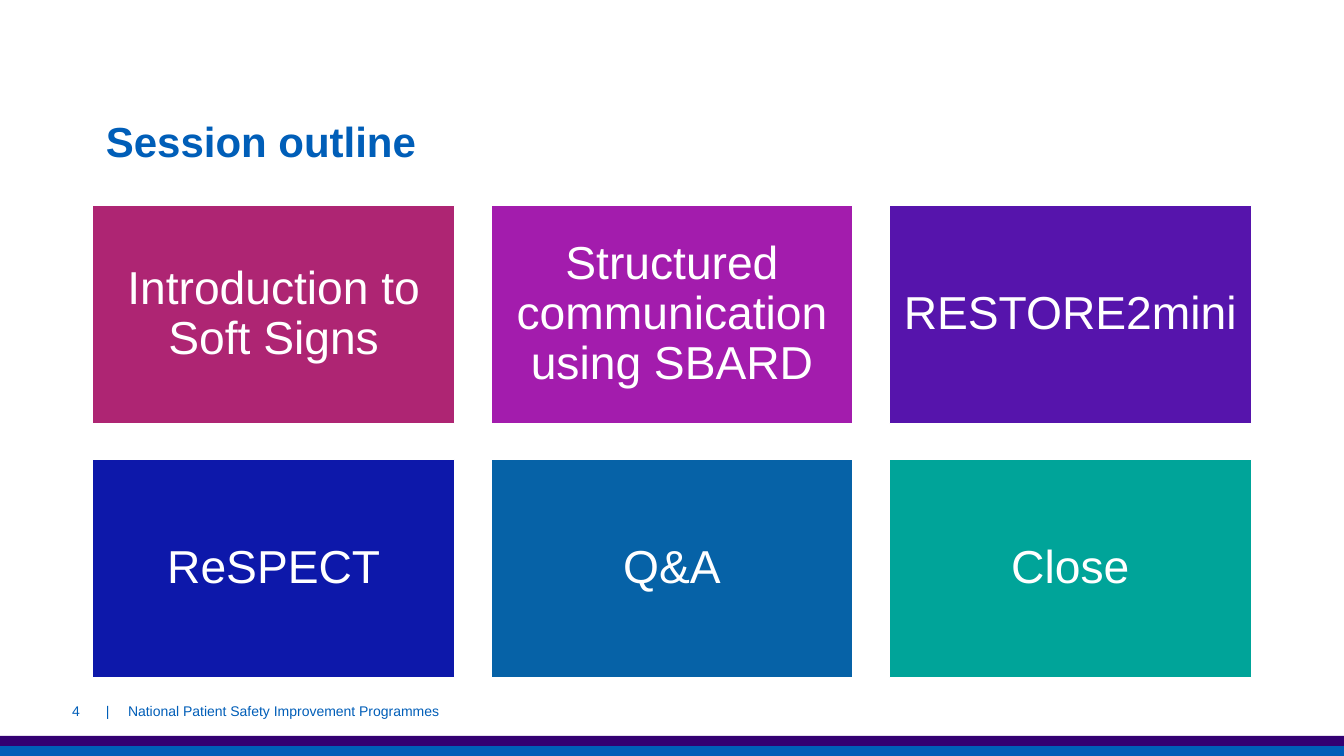
import dataclasses
import typing

import lxml.etree
import pptx
import pptx.dml.color
import pptx.enum.shapes
import pptx.enum.text
import pptx.oxml.ns
import pptx.util

Inches = pptx.util.Inches
Align = pptx.enum.text.PP_ALIGN
Anchor = pptx.enum.text.MSO_ANCHOR


@dataclasses.dataclass(frozen=True)
class Theme:
    font: str = "Arial"
    white: str = "FFFFFF"
    blue: str = "005EB8"
    purple: str = "330072"
    head: float = 30
    card: float = 33
    foot: float = 10


@dataclasses.dataclass(frozen=True)
class Box:
    left: float
    top: float
    width: float
    height: float

    def place(self) -> tuple:
        return tuple(map(Inches, dataclasses.astuple(self)))


@dataclasses.dataclass(frozen=True)
class Card:
    label: str
    fill: str


THEME = Theme()
WIDTH, HEIGHT = 13.33, 7.5
COLS = 3
GRID = Box(0.92, 2.04, 3.59, 2.16)
GAP = 0.36
PAD = 0.14
BAND = 0.1
CARDS = [
    Card("Introduction to Soft Signs", "AE2573"),
    Card("Structured communication using SBARD", "A31CAD"),
    Card("RESTORE2mini", "5614AC"),
    Card("ReSPECT", "0D18AA"),
    Card("Q&A", "0662A7"),
    Card("Close", "00A499"),
]


def shade(code: str) -> pptx.dml.color.RGBColor:
    return pptx.dml.color.RGBColor.from_string(code)


def write(shape, text: str, *, size: float, ink: str = THEME.blue, bold: bool = False,
          align=Align.LEFT, anchor=Anchor.MIDDLE, pad: tuple = (0, 0, 0, 0),
          space: float = 1.0, tab: typing.Optional[float] = None) -> None:
    frame = shape.text_frame
    frame.word_wrap = True
    frame.auto_size = pptx.enum.text.MSO_AUTO_SIZE.NONE
    frame.vertical_anchor = anchor
    sides = map(Inches, pad)
    frame.margin_left, frame.margin_top, frame.margin_right, frame.margin_bottom = sides
    para = frame.paragraphs[0]
    para.alignment = align
    para.line_spacing = space
    para.space_before = pptx.util.Pt(0)
    if tab is not None:
        name = pptx.oxml.ns.qn
        stops = lxml.etree.SubElement(para._p.get_or_add_pPr(), name("a:tabLst"))
        lxml.etree.SubElement(stops, name("a:tab"), pos=str(Inches(tab)), algn="l")
    run = para.add_run()
    run.text = text
    run.font.name = THEME.font
    run.font.size = pptx.util.Pt(size)
    run.font.bold = bold
    run.font.color.rgb = shade(ink)


def block(slide, box: Box, fill: str, line: typing.Optional[str] = None):
    shape = slide.shapes.add_shape(pptx.enum.shapes.MSO_SHAPE.RECTANGLE, *box.place())
    shape.shadow.inherit = False
    shape.fill.solid()
    shape.fill.fore_color.rgb = shade(fill)
    if line:
        shape.line.color.rgb = shade(line)
        shape.line.width = pptx.util.Pt(1)
    else:
        shape.line.fill.background()
    return shape


def tile(slide, spot: int, card: Card) -> None:
    row, col = divmod(spot, COLS)
    box = Box(GRID.left + col * (GRID.width + GAP),
              GRID.top + row * (GRID.height + GAP), GRID.width, GRID.height)
    shape = block(slide, box, card.fill, THEME.white)
    write(shape, card.label, size=THEME.card, ink=THEME.white,
          align=Align.CENTER, pad=(PAD,) * 4, space=0.9)


def main() -> None:
    deck = pptx.Presentation()
    deck.slide_width, deck.slide_height = Inches(WIDTH), Inches(HEIGHT)
    slide = deck.slides.add_slide(deck.slide_layouts[5])

    for step, fill in enumerate((THEME.blue, THEME.purple), start=1):
        block(slide, Box(0, HEIGHT - step * BAND, WIDTH, BAND), fill)

    for spot, card in enumerate(CARDS):
        tile(slide, spot, card)

    title = slide.shapes.title
    title.left, title.top, title.width, title.height = Box(1.05, 1.2, 11.76, 0.98).place()
    write(title, "Session outline", size=THEME.head, bold=True,
          anchor=Anchor.TOP, space=0.9)

    foot = slide.shapes.add_textbox(*Box(1.05, 6.85, 4.5, 0.4).place())
    write(foot, "|\tNational Patient Safety Improvement Programmes",
          size=THEME.foot, pad=(0, 0.05, 0, 0.05), tab=0.22)
    page = slide.shapes.add_textbox(*Box(0.13, 6.85, 0.76, 0.4).place())
    write(page, "4", size=THEME.foot, align=Align.RIGHT, pad=(0.1, 0.05, 0.1, 0.05))

    deck.save("out.pptx")


if __name__ == "__main__":
    main()
